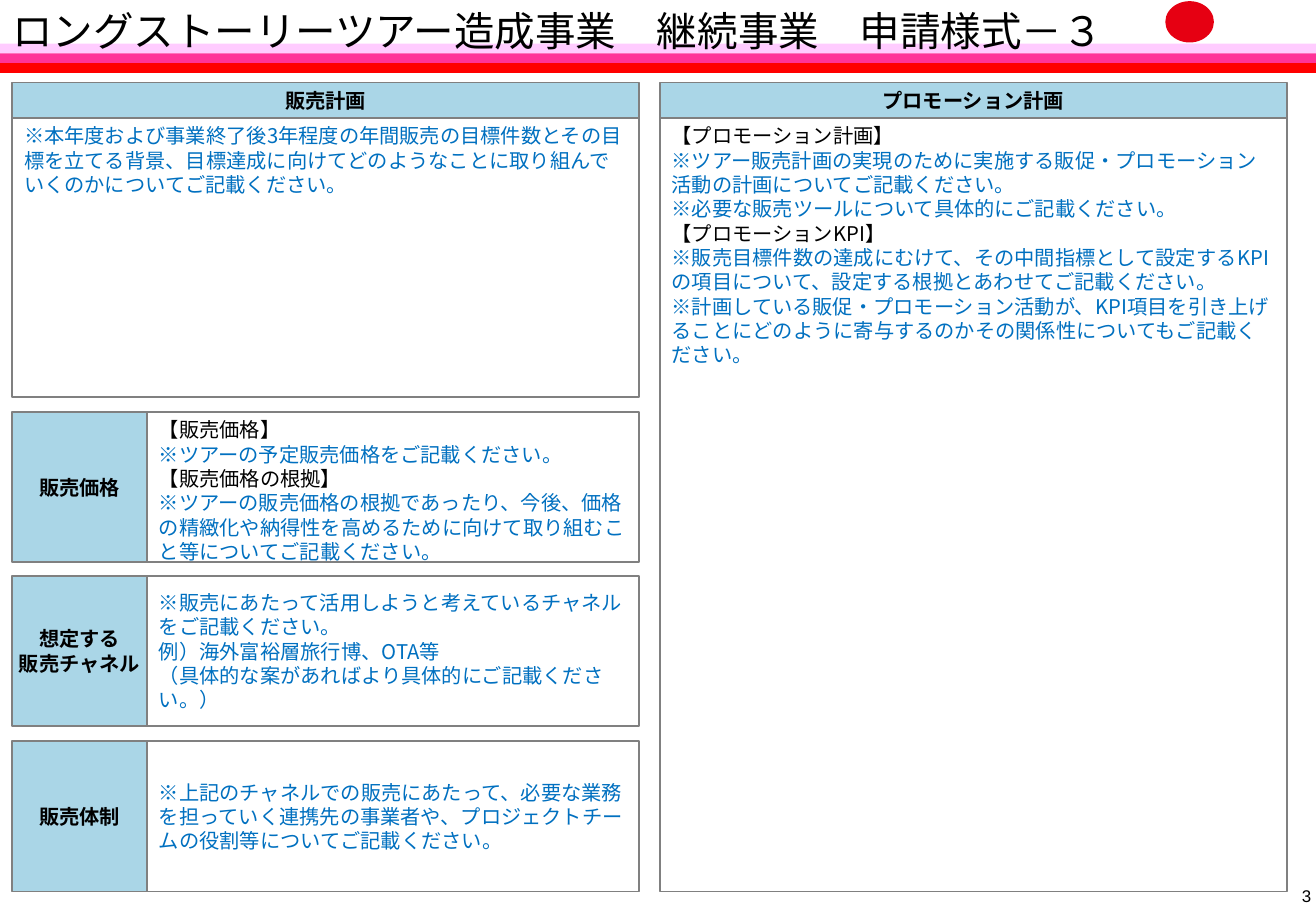
from lxml.etree import SubElement
from pptx import Presentation
from pptx.dml.color import RGBColor
from pptx.enum.lang import MSO_LANGUAGE_ID
from pptx.enum.shapes import MSO_SHAPE
from pptx.enum.text import MSO_ANCHOR, MSO_AUTO_SIZE, PP_ALIGN
from pptx.oxml.ns import qn
from pptx.util import Pt

# One px is a hundredth of an inch
PX = 9144
SLIDE_WIDTH, SLIDE_HEIGHT = 1083, 750

BLACK = RGBColor(0x00, 0x00, 0x00)
WHITE = RGBColor(0xFF, 0xFF, 0xFF)
GREY = RGBColor(0x80, 0x80, 0x80)
BLUE = RGBColor(0x00, 0x70, 0xC0)
LABEL_BLUE = RGBColor(0xAA, 0xD6, 0xE7)
RED = RGBColor(0xFF, 0x00, 0x00)
EMBLEM_RED = RGBColor(0xE6, 0x00, 0x12)
BANDS = [RGBColor(0xFF, 0xCC, 0xFF), RGBColor(0xFF, 0x33, 0x99), RED]

JAPANESE_FONT = "Noto Sans CJK JP"

# Grid of the form
LEFT_COLUMN, RIGHT_COLUMN, COLUMN_WIDTH = 10, 543, 516
HEADER_TOP, HEADER_HEIGHT = 68, 29
PANEL_TOP, FORM_BOTTOM = HEADER_TOP + HEADER_HEIGHT, 734
LABEL_WIDTH, ROW_TOP, ROW_HEIGHT = 111, 339, 124

SALES_PLAN = [
    "※本年度および事業終了後3年程度の年間販売の目標件数とその目標を立てる背景、"
    "目標達成に向けてどのようなことに取り組んでいくのかについてご記載ください。",
]
PROMOTION_PLAN = [
    "【プロモーション計画】",
    "※ツアー販売計画の実現のために実施する販促・プロモーション活動の計画についてご記載ください。",
    "※必要な販売ツールについて具体的にご記載ください。",
    "【プロモーションKPI】",
    "※販売目標件数の達成にむけて、その中間指標として設定するKPIの項目について、"
    "設定する根拠とあわせてご記載ください。",
    "※計画している販促・プロモーション活動が、KPI項目を引き上げることに"
    "どのように寄与するのかその関係性についてもご記載ください。",
]
# Label lines, guidance lines, anchor of the guidance
ROWS = [
    (["販売価格"], [
        "【販売価格】",
        "※ツアーの予定販売価格をご記載ください。",
        "【販売価格の根拠】",
        "※ツアーの販売価格の根拠であったり、今後、価格の精緻化や納得性を高めるために"
        "向けて取り組むこと等についてご記載ください。",
    ], MSO_ANCHOR.TOP),
    (["想定する", "販売チャネル"], [
        "※販売にあたって活用しようと考えているチャネルをご記載ください。",
        "例）海外富裕層旅行博、OTA等",
        "（具体的な案があればより具体的にご記載ください。）",
    ], MSO_ANCHOR.MIDDLE),
    (["販売体制"], [
        "※上記のチャネルでの販売にあたって、必要な業務を担っていく連携先の事業者や、"
        "プロジェクトチームの役割等についてご記載ください。",
    ], MSO_ANCHOR.MIDDLE),
]


def scale(*lengths):
    return [length * PX for length in lengths]


def write_text(shape, lines, size=12, color=BLACK, heading_color=BLACK, bold=False,
               font=JAPANESE_FONT, align=PP_ALIGN.LEFT, anchor=MSO_ANCHOR.TOP, wrap=True):
    """Write one paragraph per line; bracketed lines take the heading colour."""
    frame = shape.text_frame
    frame.auto_size = MSO_AUTO_SIZE.NONE
    frame.word_wrap = wrap
    frame.vertical_anchor = anchor
    for index, line in enumerate(lines):
        paragraph = frame.add_paragraph() if index else frame.paragraphs[0]
        paragraph.alignment = align
        run = paragraph.add_run()
        run.text = line
        run.font.size = Pt(size)
        run.font.bold = bold
        run.font.color.rgb = heading_color if line.startswith("【") else color
        run.font.name = font
        run.font.language_id = MSO_LANGUAGE_ID.JAPANESE
        SubElement(run.font._element, qn("a:ea"), typeface=font)


def add_block(slide, box, fill, line=None, kind=MSO_SHAPE.RECTANGLE):
    shape = slide.shapes.add_shape(kind, *scale(*box))
    shape.shadow.inherit = False
    shape.fill.solid()
    shape.fill.fore_color.rgb = fill
    if line is None:
        shape.line.fill.background()
    else:
        shape.line.color.rgb = line
        shape.line.width = Pt(1)
    return shape


def add_label(slide, box, lines):
    shape = add_block(slide, box, LABEL_BLUE, GREY)
    write_text(shape, lines, bold=True, align=PP_ALIGN.CENTER,
               anchor=MSO_ANCHOR.MIDDLE, wrap=False)


def add_guidance(slide, box, lines, anchor=MSO_ANCHOR.TOP):
    shape = add_block(slide, box, WHITE, GREY)
    write_text(shape, lines, color=BLUE, anchor=anchor)


def add_header(slide):
    for index, color in enumerate(BANDS):
        add_block(slide, (0, 36 + 8 * index, SLIDE_WIDTH, 8), color)
    # Plain disc in the emblem's place
    add_block(slide, (959, 1, 40, 34), EMBLEM_RED, kind=MSO_SHAPE.OVAL)
    # Title, brought in front of the bands
    title = slide.shapes.title
    title.left, title.top, title.width, title.height = scale(0, 7, 999, 36)
    write_text(title, ["ロングストーリーツアー造成事業　継続事業　申請様式－３"],
               size=24, anchor=MSO_ANCHOR.MIDDLE)
    slide.shapes.element.append(title.element)


def add_page_number(slide, number):
    box = slide.shapes.add_textbox(*scale(1059, 727, 24, 23))
    frame = box.text_frame
    frame.margin_left = frame.margin_right = 4 * PX
    frame.margin_top = frame.margin_bottom = 4 * PX
    write_text(box, [number], size=10, font="Arial", align=PP_ALIGN.RIGHT,
               anchor=MSO_ANCHOR.BOTTOM, wrap=False)


def main():
    presentation = Presentation()
    presentation.slide_width, presentation.slide_height = scale(SLIDE_WIDTH, SLIDE_HEIGHT)
    slide = presentation.slides.add_slide(presentation.slide_layouts.get_by_name("Title Only"))

    add_header(slide)
    add_page_number(slide, "3")

    # Plan panels with their headings
    for left, heading, lines, bottom in [
        (LEFT_COLUMN, "販売計画", SALES_PLAN, 327),
        (RIGHT_COLUMN, "プロモーション計画", PROMOTION_PLAN, FORM_BOTTOM),
    ]:
        add_guidance(slide, (left, PANEL_TOP, COLUMN_WIDTH, bottom - PANEL_TOP), lines)
        add_label(slide, (left, HEADER_TOP, COLUMN_WIDTH, HEADER_HEIGHT), [heading])

    # Labelled rows, evenly spread down to the bottom of the form
    row_span = FORM_BOTTOM - ROW_HEIGHT - ROW_TOP
    for index, (label, lines, anchor) in enumerate(ROWS):
        top = ROW_TOP + row_span * index // (len(ROWS) - 1)
        add_label(slide, (LEFT_COLUMN, top, LABEL_WIDTH, ROW_HEIGHT), label)
        add_guidance(slide, (LEFT_COLUMN + LABEL_WIDTH, top,
                             COLUMN_WIDTH - LABEL_WIDTH, ROW_HEIGHT), lines, anchor)

    presentation.save("out.pptx")


if __name__ == "__main__":
    main()
